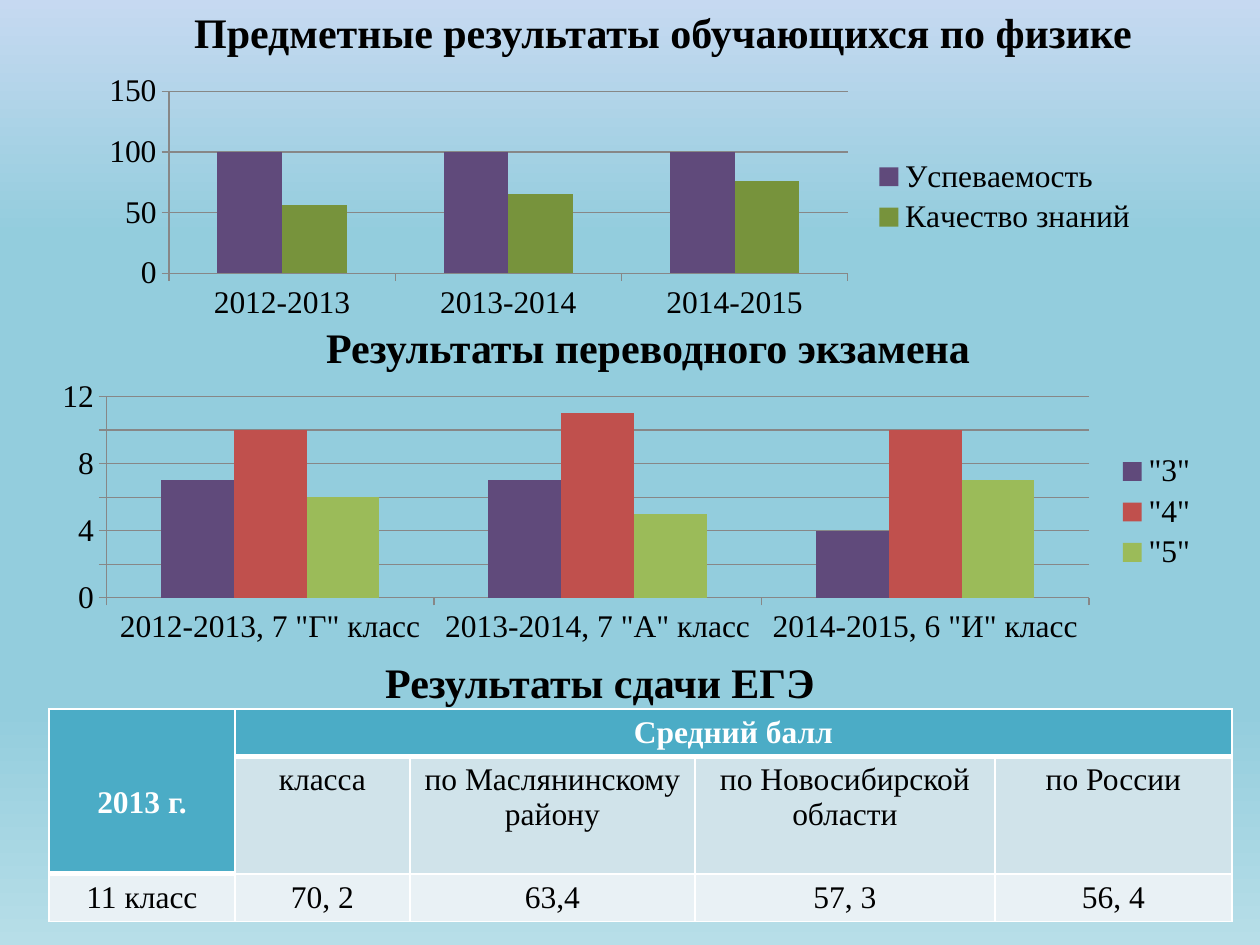
from lxml import etree
from pptx import Presentation, util as u
from pptx.chart.data import CategoryChartData
from pptx.dml.color import RGBColor
from pptx.enum import chart as ch, text
from pptx.oxml.ns import qn

FONT = "Times New Roman"
COLORS = {
    "ink": "000000", "white": "FFFFFF", "grid": "878787",
    "purple": "604A7B", "olive": "77933C", "red": "C0504D", "green": "9BBB59",
    "header": "4BACC6", "subheader": "D0E3EA", "row": "E9F1F5",
}
BACKDROP = [(0, "C6D9F1"), (25, "93CDDD"), (75, "93CDDD"), (100, "B7DEE8")]


def px(n):
    return u.Emu(round(n * 914400 / 126))


def style(font, size, color="ink", bold=False):
    font.name, font.size, font.bold = FONT, u.Pt(size), bold
    font.color.rgb = RGBColor.from_string(COLORS[color])


prs = Presentation()
prs.slide_width, prs.slide_height = px(1260), px(945)
slide = prs.slides.add_slide(prs.slide_layouts[6])

backdrop = slide.background.fill
backdrop.gradient()
backdrop.gradient_angle = 270
stops = slide.element.find(".//" + qn("a:gsLst"))
for stop in list(stops):
    stops.remove(stop)
for position, color in BACKDROP:
    stop = etree.SubElement(stops, qn("a:gs"), pos=str(position * 1000))
    etree.SubElement(stop, qn("a:srgbClr"), val=color)

# Exam score table
WIDTHS = [186, 175, 285, 300, 237]
HEIGHTS = [47, 117, 47]
SCORES = [
    ["2013 г.", "Средний балл", "", "", ""],
    ["", "класса", "по Маслянинскому району", "по Новосибирской области", "по России"],
    ["11 класс", "70, 2", "63,4", "57, 3", "56, 4"],
]
scores = slide.shapes.add_table(3, 5, px(49), px(709), px(sum(WIDTHS)), px(sum(HEIGHTS))).table
scores.horz_banding = False
for column, width in zip(scores.columns, WIDTHS):
    column.width = px(width)
for row, height in zip(scores.rows, HEIGHTS):
    row.height = px(height)
scores.cell(0, 0).merge(scores.cell(1, 0))
scores.cell(0, 1).merge(scores.cell(0, 4))

for r, row in enumerate(SCORES):
    for c, wording in enumerate(row):
        cell = scores.cell(r, c)
        is_header = r == 0 or (r == 1 and c == 0)
        below_header = (r == 1 and c > 0) or (r == 2 and c == 0)
        ends_header = is_header and not (r == 0 and c == 0)
        fill = "header" if is_header else ("subheader" if r == 1 else "row")
        cell.fill.solid()
        cell.fill.fore_color.rgb = RGBColor.from_string(COLORS[fill])
        if wording:
            cell.text_frame.text = wording
            line = cell.text_frame.paragraphs[0]
            line.alignment = text.PP_ALIGN.CENTER
            style(line.runs[0].font, 18, "white" if is_header else "ink", is_header)
        borders = {"L": 1, "R": 1, "T": 3 if below_header else 1,
                   "B": 3 if ends_header or (r == 0 and c == 0) else 1}
        properties = cell._tc.get_or_add_tcPr()
        for i, (side, points) in enumerate(borders.items()):
            border = etree.Element(qn(f"a:ln{side}"), w=str(u.Pt(points)))
            paint = etree.SubElement(border, qn("a:solidFill"))
            etree.SubElement(paint, qn("a:srgbClr"), val=COLORS["white"])
            properties.insert(i, border)
scores.cell(0, 0).margin_top = px(76)

# Column charts: box, years, series, axis maximum and step
CHARTS = [
    ((88, 69, 1063, 256), ["2012-2013", "2013-2014", "2014-2015"],
     [("Успеваемость", [100, 100, 100], "purple"),
      ("Качество знаний", [56, 65, 76], "olive")], 150, 50),
    ((39, 374, 1172, 276),
     ['2012-2013, 7 "Г" класс', '2013-2014, 7 "А" класс', '2014-2015, 6 "И" класс'],
     [('"3"', [7, 7, 4], "purple"), ('"4"', [10, 11, 10], "red"),
      ('"5"', [6, 5, 7], "green")], 12, 2),
]
for box, years, results, maximum, step in CHARTS:
    data = CategoryChartData()
    data.categories = years
    for name, values, _ in results:
        data.add_series(name, values)
    chart = slide.shapes.add_chart(
        ch.XL_CHART_TYPE.COLUMN_CLUSTERED, *map(px, box), data).chart
    style(chart.font, 18)
    chart.has_title = False
    chart.has_legend = True
    chart.legend.position = ch.XL_LEGEND_POSITION.RIGHT
    chart.legend.include_in_layout = False

    plot = chart.plots[0]
    plot.gap_width, plot.overlap, plot.vary_by_categories = 150, 0, False
    for series, (_, _, color) in zip(plot.series, results):
        series.format.fill.solid()
        series.format.fill.fore_color.rgb = RGBColor.from_string(COLORS[color])

    scale = chart.value_axis
    scale.minimum_scale, scale.maximum_scale, scale.major_unit = 0, maximum, step
    scale.has_major_gridlines = True
    for axis in (scale, chart.category_axis):
        axis.major_tick_mark = ch.XL_TICK_MARK.OUTSIDE
    for part in (scale, chart.category_axis, scale.major_gridlines):
        part.format.line.color.rgb = RGBColor.from_string(COLORS["grid"])
        part.format.line.width = u.Pt(0.75)

# Headings
HEADINGS = [
    ("Предметные результаты обучающихся по физике", 163, 0, 1000),
    ("Результаты переводного экзамена", 215, 315, 866),
    ("Результаты сдачи ЕГЭ", 285, 650, 630),
]
for wording, left, top, width in HEADINGS:
    heading = slide.shapes.add_textbox(px(left), px(top), px(width), px(63)).text_frame
    heading.word_wrap = True
    heading.text = wording
    heading.paragraphs[0].alignment = text.PP_ALIGN.CENTER
    style(heading.paragraphs[0].runs[0].font, 24, bold=True)

prs.save("out.pptx")
